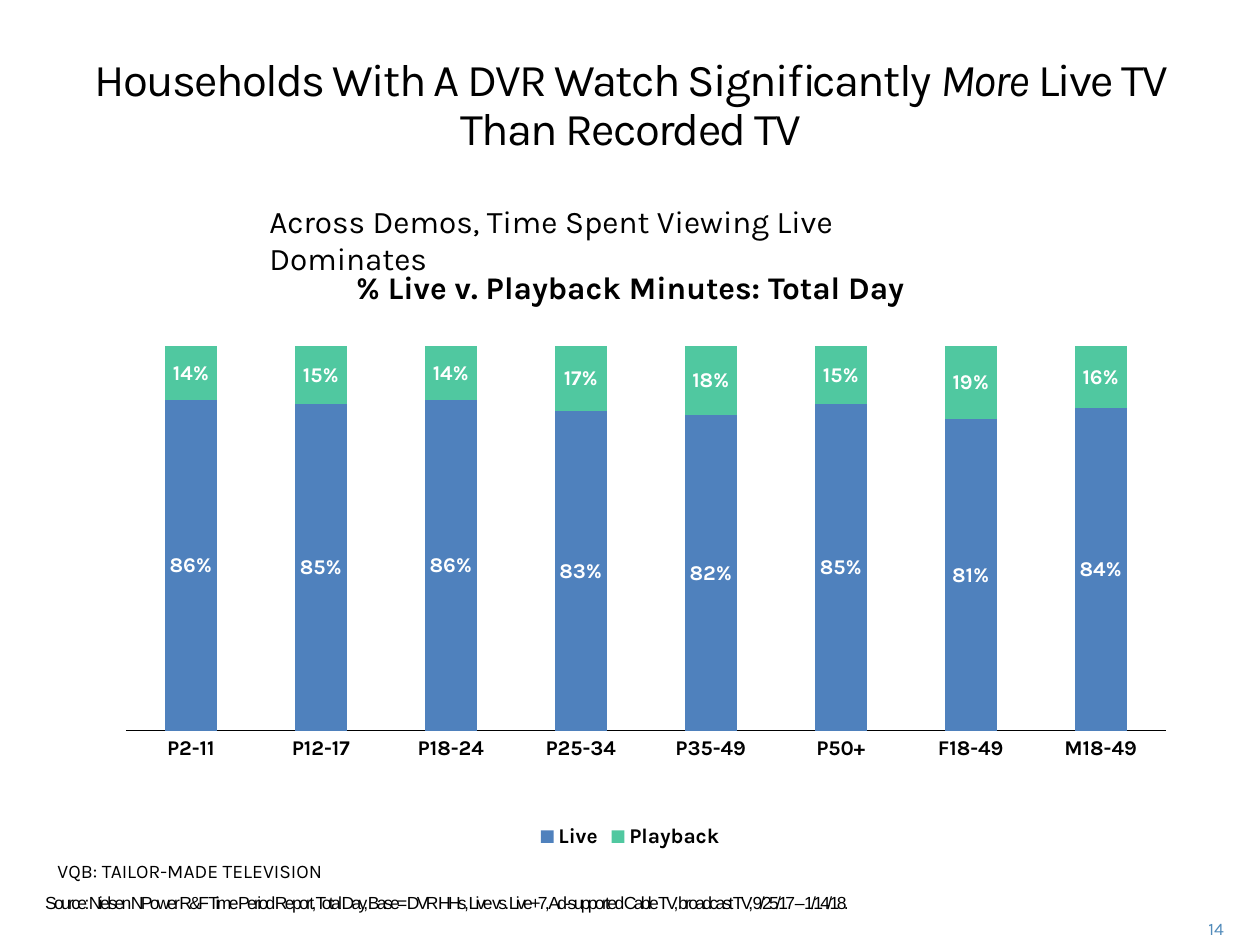
import pptx
import pptx.chart.data
import pptx.dml.color
import pptx.enum.chart
import pptx.enum.text
import pptx.oxml
import pptx.util
from pptx.util import Cm, Pt

RGBColor = pptx.dml.color.RGBColor
Align = pptx.enum.text.PP_ALIGN
BLACK = RGBColor(0x00, 0x00, 0x00)
WHITE = RGBColor(0xFF, 0xFF, 0xFF)
LIVE_BLUE = RGBColor(0x4F, 0x81, 0xBD)
PLAYBACK_GREEN = RGBColor(0x50, 0xC8, 0xA0)
NUMBER_BLUE = RGBColor(0x50, 0x8A, 0xBA)
FONT = "Karla"

LIVE_SHARES = {
    "P2-11": 0.86, "P12-17": 0.85, "P18-24": 0.86, "P25-34": 0.83,
    "P35-49": 0.82, "P50+": 0.85, "F18-49": 0.81, "M18-49": 0.84,
}
PLOT_AREA = {"x": 0.065, "y": 0.062, "w": 0.897, "h": 0.71}


def style_font(font, size, color=BLACK, bold=False, name=FONT):
    font.size = Pt(size)
    font.bold = bold
    font.name = name
    font.color.rgb = color


def add_text(slide, box, runs, size, color=BLACK, bold=False, name=FONT,
             align=Align.LEFT, wrap=True, inset=True, tracking=0):
    """Add a one-paragraph text box; runs are (text, italic) pairs."""
    frame = slide.shapes.add_textbox(*map(Cm, box)).text_frame
    frame.word_wrap = wrap
    if not inset:
        frame.margin_left = frame.margin_right = 0
        frame.margin_top = frame.margin_bottom = 0
    paragraph = frame.paragraphs[0]
    paragraph.alignment = align
    for text, italic in runs:
        run = paragraph.add_run()
        run.text = text
        style_font(run.font, size, color, bold, name)
        run.font.italic = italic
        if tracking:
            run.font._element.set("spc", str(int(tracking * 100)))
    return paragraph


def add_heading(slide, box):
    left, top, width, height = box
    title = add_text(
        slide, (left, top, width, 1.27),
        [("Households With A DVR Watch Significantly ", False),
         ("More", True),
         (" Live TV Than Recorded TV", False)],
        26, align=Align.CENTER, inset=False, tracking=-1)
    title.line_spacing = Pt(28)
    add_text(slide, (left + 3.63, top + 2.8, 15.01, 1.02),
             [("Across Demos, Time Spent Viewing Live Dominates", False)], 18)


def fix_plot_area(chart):
    """Pin the inner plot area to fractions of the chart frame."""
    plot_area = chart._chartSpace.chart.plotArea
    for old_layout in plot_area.findall(pptx.oxml.ns.qn("c:layout")):
        plot_area.remove(old_layout)
    sizes = "".join(f'<c:{key} val="{value}"/>' for key, value in PLOT_AREA.items())
    plot_area.insert(0, pptx.oxml.parse_xml(
        f'<c:layout {pptx.oxml.ns.nsdecls("c")}><c:manualLayout>'
        '<c:layoutTarget val="inner"/><c:xMode val="edge"/><c:yMode val="edge"/>'
        f'{sizes}</c:manualLayout></c:layout>'))


def add_viewing_chart(slide, box):
    left, top, width, height = box
    title_width = 11.61
    add_text(slide, (left + (width - title_width) / 2, top, title_width, 1.02),
             [("% Live v. Playback Minutes: Total Day", False)],
             18, bold=True, align=Align.CENTER, wrap=False)

    shares = pptx.chart.data.CategoryChartData(number_format="0%")
    shares.categories = list(LIVE_SHARES)
    shares.add_series("Live", list(LIVE_SHARES.values()))
    shares.add_series("Playback", [round(1 - live, 2) for live in LIVE_SHARES.values()])
    chart = slide.shapes.add_chart(
        pptx.enum.chart.XL_CHART_TYPE.COLUMN_STACKED,
        Cm(left), Cm(top + 1.02), Cm(width), Cm(height - 1.02), shares).chart
    style_font(chart.font, 10)
    chart.has_title = False
    chart.has_legend = True
    chart.legend.position = pptx.enum.chart.XL_LEGEND_POSITION.BOTTOM
    chart.legend.include_in_layout = False
    style_font(chart.legend.font, 12, bold=True)

    demos = chart.category_axis
    demos.major_tick_mark = pptx.enum.chart.XL_TICK_MARK.NONE
    demos.format.line.color.rgb = BLACK
    demos.format.line.width = Pt(0.75)
    style_font(demos.tick_labels.font, 12, bold=True)
    share_axis = chart.value_axis
    share_axis.minimum_scale, share_axis.maximum_scale = 0, 1
    share_axis.has_major_gridlines = False
    share_axis.visible = False

    plot = chart.plots[0]
    plot.gap_width, plot.overlap = 150, 100
    plot.vary_by_categories = False
    for series, color in zip(plot.series, (LIVE_BLUE, PLAYBACK_GREEN)):
        series.format.fill.solid()
        series.format.fill.fore_color.rgb = color
        labels = series.data_labels
        labels.show_value = True
        labels.number_format = "0%"
        labels.number_format_is_linked = False
        style_font(labels.font, 12, WHITE, bold=True)
    fix_plot_area(chart)


def add_footer(slide, box):
    left, top, width, height = box
    add_text(slide, (left, top, 7.82, 1.19),
             [("VQB: TAILOR-MADE TELEVISION", False)], 11)
    add_text(slide, (left, top + 0.78, 18.8, 0.64),
             [("Source: Nielsen NPower R&F Time Period Report, Total Day, "
               "Base= DVR HHs, Live vs. Live+7, Ad-supported Cable TV, "
               "broadcast TV, 9/25/17 – 1/14/18.", False)],
             10, name="Arial", inset=False, tracking=-1.5)
    add_text(slide, (left + width - 1.55, top + height - 0.64, 1.55, 0.64),
             [("14", False)], 10, NUMBER_BLUE, align=Align.RIGHT)


def main():
    deck = pptx.Presentation()
    deck.slide_width, deck.slide_height = Cm(25.4), Cm(19.05)
    slide = deck.slides.add_slide(deck.slide_layouts[6])
    add_heading(slide, (1.55, 1.14, 22.33, 3.82))
    add_viewing_chart(slide, (1.02, 5.28, 23.37, 11.94))
    add_footer(slide, (0.91, 17.2, 24.01, 1.83))
    deck.save("out.pptx")


if __name__ == "__main__":
    main()
